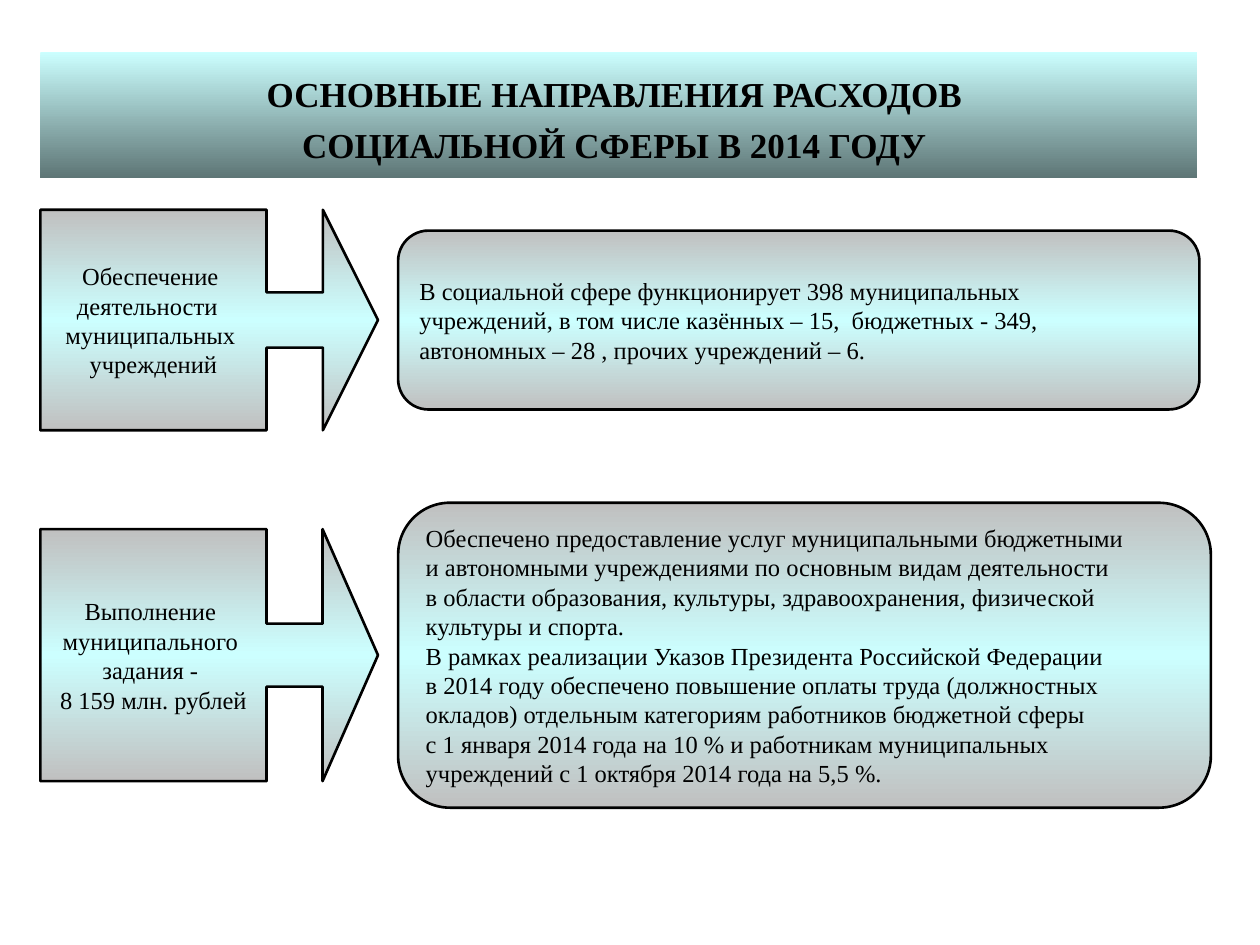
"""Builds the slide on the main social spending directions in 2014."""
import copy
import dataclasses

import pptx
import pptx.dml.color
import pptx.enum.shapes
import pptx.enum.text
import pptx.util

COLUMNS, ROWS = 100, 75
SHAPES = pptx.enum.shapes.MSO_SHAPE
ALIGN = pptx.enum.text.PP_ALIGN


@dataclasses.dataclass(frozen=True)
class Theme:
    """Colours, font and sizes of the slide."""
    ink: str = "000000"
    title_gradient: tuple = ("CCFFFF", "5E7676")
    panel_gradient: tuple = ("C0C0C0", "CCFFFF", "C0C0C0")
    font: str = "Times New Roman"
    title_size: int = 20
    body_size: int = 14
    outline: float = 1.5


THEME = Theme()
LEFT, PANEL_LEFT, CALLOUT_WIDTH = 3.2, 31.6, 26.8
TITLE = "ОСНОВНЫЕ НАПРАВЛЕНИЯ РАСХОДОВ \vСОЦИАЛЬНОЙ СФЕРЫ В 2014 ГОДУ "
DIRECTIONS = [
    {
        "center": 25.4, "callout_height": 17.5, "head": 0.25,
        "panel_width": 63.6, "panel_height": 14.2,
        "label": """Обеспечение 
деятельности  
муниципальных 
учреждений""",
        "details": """В социальной сфере функционирует 398 муниципальных
учреждений, в том числе казённых – 15,  бюджетных - 349,
автономных – 28 , прочих учреждений – 6.""",
    },
    {
        "center": 52, "callout_height": 20, "head": 0.22,
        "panel_width": 64.5, "panel_height": 24.2,
        "label": """Выполнение 
муниципального 
задания - 
8 159 млн. рублей""",
        "details": """Обеспечено предоставление услуг муниципальными бюджетными
и автономными учреждениями по основным видам деятельности
в области образования, культуры, здравоохранения, физической
культуры и спорта.
В рамках реализации Указов Президента Российской Федерации
в 2014 году обеспечено повышение оплаты труда (должностных
окладов) отдельным категориям работников бюджетной сферы
с 1 января 2014 года на 10 % и работникам муниципальных
учреждений с 1 октября 2014 года на 5,5 %.""",
    },
]


def grid_box(presentation, column, row, width, height):
    """Turn grid columns and rows into left, top, width and height."""
    across = presentation.slide_width / COLUMNS
    down = presentation.slide_height / ROWS
    return [round(length) for length in
            (column * across, row * down, width * across, height * down)]


def fill_gradient(shape, colors):
    """Fill the shape from top to bottom with evenly spaced colours."""
    shape.fill.gradient()
    shape.fill.gradient_angle = 270
    stop_list = shape._element.spPr.find(".//" + "{*}gsLst")
    for _ in colors[2:]:
        stop_list.append(copy.deepcopy(stop_list[0]))
    for index, (stop, color) in enumerate(zip(shape.fill.gradient_stops, colors)):
        stop.position = index / (len(colors) - 1)
        stop.color.rgb = pptx.dml.color.RGBColor.from_string(color)


def write_text(shape, text, size=THEME.body_size, bold=False, align=ALIGN.LEFT,
               wrap=False, spacing=1.0):
    """Write one paragraph per line of text in the given format."""
    frame = shape.text_frame
    frame.text = text
    frame.word_wrap = wrap
    frame.auto_size = pptx.enum.text.MSO_AUTO_SIZE.NONE
    frame.vertical_anchor = pptx.enum.text.MSO_ANCHOR.MIDDLE
    for paragraph in frame.paragraphs:
        paragraph.alignment = align
        paragraph.line_spacing = spacing
        for run in paragraph.runs:
            run.font.name = THEME.font
            run.font.size = pptx.util.Pt(size)
            run.font.bold = bold
            run.font.color.rgb = pptx.dml.color.RGBColor.from_string(THEME.ink)


def add_panel(slide, kind, box, adjustments, text, align):
    """Add an outlined gradient shape holding text."""
    shape = slide.shapes.add_shape(kind, *box)
    shape.shadow.inherit = False
    for index, value in enumerate(adjustments):
        shape.adjustments[index] = value
    fill_gradient(shape, THEME.panel_gradient)
    shape.line.color.rgb = pptx.dml.color.RGBColor.from_string(THEME.ink)
    shape.line.width = pptx.util.Pt(THEME.outline)
    write_text(shape, text, align=align)


def add_title(presentation, slide):
    """Place the title placeholder as a gradient banner."""
    title = slide.shapes.title
    title.left, title.top, title.width, title.height = grid_box(
        presentation, LEFT, 4.1, 91.8, 10)
    fill_gradient(title, THEME.title_gradient)
    write_text(title, TITLE, size=THEME.title_size, bold=True,
               align=ALIGN.CENTER, wrap=True, spacing=1.22)


def add_direction(presentation, slide, direction):
    """Add an arrow callout and its details, centred on one row."""
    center = direction["center"]
    height = direction["callout_height"]
    box = grid_box(presentation, LEFT, center - height / 2, CALLOUT_WIDTH, height)
    add_panel(slide, SHAPES.RIGHT_ARROW_CALLOUT, box,
              (0.25, 0.5, direction["head"], 0.67), direction["label"], ALIGN.CENTER)
    height = direction["panel_height"]
    box = grid_box(presentation, PANEL_LEFT, center - height / 2,
                   direction["panel_width"], height)
    add_panel(slide, SHAPES.ROUNDED_RECTANGLE, box, (0.17,),
              direction["details"], ALIGN.LEFT)


def main():
    """Build and save the presentation."""
    presentation = pptx.Presentation()
    presentation.slide_width = pptx.util.Inches(10)
    presentation.slide_height = pptx.util.Inches(7.5)
    slide = presentation.slides.add_slide(
        presentation.slide_layouts.get_by_name("Title Only"))
    add_title(presentation, slide)
    for direction in DIRECTIONS:
        add_direction(presentation, slide, direction)
    presentation.save("out.pptx")


if __name__ == "__main__":
    main()
